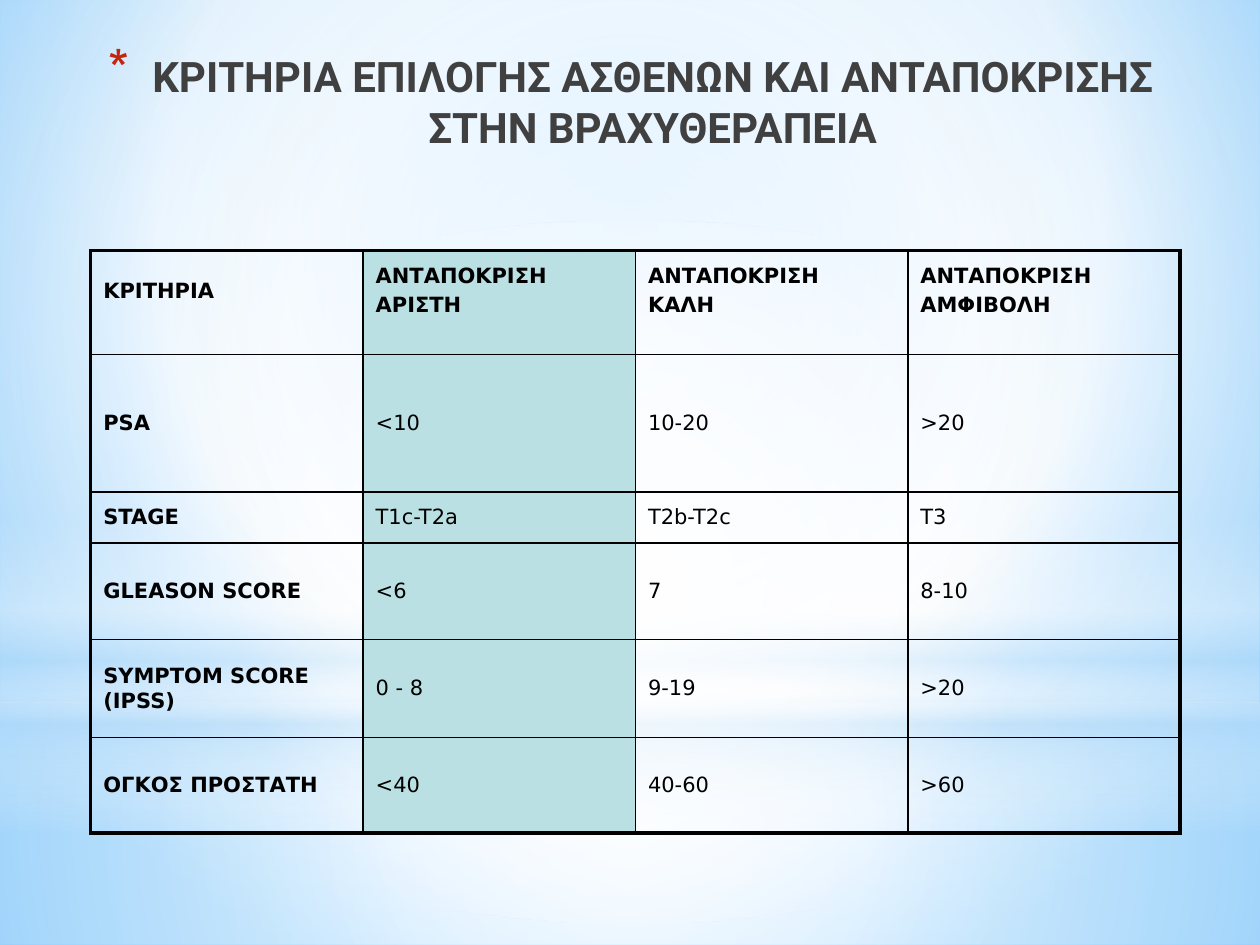
from dataclasses import dataclass

from lxml.etree import SubElement
from pptx import Presentation
from pptx.dml.color import RGBColor as Rgb
from pptx.enum.shapes import MSO_SHAPE as Shape
from pptx.enum.text import MSO_ANCHOR as Anchor, MSO_AUTO_SIZE as AutoSize, PP_ALIGN as Align
from pptx.oxml import parse_xml
from pptx.oxml.ns import nsdecls, qn
from pptx.util import Cm, Pt


@dataclass(frozen=True)
class Theme:
    title_font: str = "Roboto"
    body_font: str = "DejaVu Sans"
    title_size: float = 24
    body_size: float = 12
    title_color: str = "404040"
    body_color: str = "000000"
    bullet_color: str = "C3260C"
    highlight: str = "BBE0E3"
    white: str = "FFFFFF"
    haze: str = "B4DCFA"
    sky_inner: str = "9ED5FF"
    sky_outer: str = "5BB9FF"
    outer_border: float = 2.25
    inner_border: float = 1


class SlideBuilder:
    def __init__(self, presentation, theme):
        self.theme = theme
        self.slide = presentation.slides.add_slide(presentation.slide_layouts[5])

    def gradient(self, fill, element, stops, focus=None):
        """Stops are (position, colour, opacity); focus is left, top, right, bottom in %."""
        fill.gradient()
        gradient = element.find(".//" + qn("a:gradFill"))
        gradient.clear()
        stop_list = SubElement(gradient, qn("a:gsLst"))
        for position, color, opacity in stops:
            stop = SubElement(stop_list, qn("a:gs"), pos=str(position * 1000))
            rgb = SubElement(stop, qn("a:srgbClr"), val=color)
            if opacity < 100:
                SubElement(rgb, qn("a:alpha"), val=str(opacity * 1000))
        if focus:
            circle = SubElement(gradient, qn("a:path"))
            circle.set("path", "circle")
            sides = {side: str(value * 1000) for side, value in zip("ltrb", focus)}
            SubElement(circle, qn("a:fillToRect"), **sides)
        else:
            SubElement(gradient, qn("a:lin"), ang="5400000", scaled="0")

    def background(self, stops, focus):
        self.gradient(self.slide.background.fill, self.slide.element, stops, focus)

    def glow(self, kind, top, height, stops, focus=None):
        shape = self.slide.shapes.add_shape(kind, Cm(0), Cm(top), Cm(25.4), Cm(height))
        shape.shadow.inherit = False
        shape.line.fill.background()
        self.gradient(shape.fill, shape.element, stops, focus)

    def add_run(self, paragraph, text, font, size, color, bold):
        run = paragraph.add_run()
        run.text = text
        run.font.name = font
        run.font.size = Pt(size)
        run.font.bold = bold
        run.font.color.rgb = Rgb.from_string(color)

    def title(self, text, left, top, width, height):
        theme = self.theme
        title = self.slide.shapes.title
        title.left, title.top, title.width, title.height = map(Cm, (left, top, width, height))
        self.slide.shapes.element.append(title.element)  # in front of the glows
        frame = title.text_frame
        frame.word_wrap = True
        frame.auto_size = AutoSize.NONE
        frame.vertical_anchor = Anchor.TOP
        paragraph = frame.paragraphs[0]
        paragraph.alignment = Align.CENTER
        self.add_run(paragraph, text, theme.title_font, theme.title_size, theme.title_color, True)
        # Hanging asterisk bullet
        properties = paragraph._p.get_or_add_pPr()
        properties.set("marL", str(Cm(0.89)))
        properties.set("indent", str(Cm(-0.89)))
        bullet_color = SubElement(properties, qn("a:buClr"))
        SubElement(bullet_color, qn("a:srgbClr"), val=theme.bullet_color)
        SubElement(properties, qn("a:buSzPct"), val="128000")
        SubElement(properties, qn("a:buChar"), char="*")

    def cell(self, cell, text, bold, highlighted, outer_sides):
        theme = self.theme
        cell.vertical_anchor = Anchor.MIDDLE
        if highlighted:
            cell.fill.solid()
            cell.fill.fore_color.rgb = Rgb.from_string(theme.highlight)
        else:
            cell.fill.background()
        frame = cell.text_frame
        for index, line in enumerate(text.split("\n")):
            paragraph = frame.add_paragraph() if index else frame.paragraphs[0]
            paragraph.space_before = Pt(theme.body_size * 0.2)
            self.add_run(paragraph, line, theme.body_font, theme.body_size, theme.body_color, bold)
        # Borders precede the fill in the cell properties
        properties = cell._tc.get_or_add_tcPr()
        for index, side in enumerate("LRTB"):
            width = theme.outer_border if side in outer_sides else theme.inner_border
            properties.insert(index, parse_xml(
                f'<a:ln{side} {nsdecls("a")} w="{Pt(width)}"><a:solidFill>'
                f'<a:srgbClr val="{theme.body_color}"/></a:solidFill></a:ln{side}>'))

    def table(self, rows, row_heights, column_width, left, top, highlighted_column):
        row_count, column_count = len(rows), len(rows[0])
        table = self.slide.shapes.add_table(
            row_count, column_count, Cm(left), Cm(top),
            Cm(column_width * column_count), Cm(sum(row_heights))).table
        table.first_row = table.horz_banding = False
        for column in table.columns:
            column.width = Cm(column_width)
        for r, (texts, height) in enumerate(zip(rows, row_heights)):
            table.rows[r].height = Cm(height)
            for c, text in enumerate(texts):
                edges = {"L": c == 0, "R": c == column_count - 1,
                         "T": r == 0, "B": r == row_count - 1}
                outer_sides = [side for side, outer in edges.items() if outer]
                cell = table.cell(r, c)
                self.cell(cell, text, r == 0 or c == 0, c == highlighted_column, outer_sides)
                if r == 0:
                    cell.margin_bottom = Cm(0.6)  # headings sit above the middle


def main():
    presentation = Presentation()
    presentation.slide_width, presentation.slide_height = Cm(25.4), Cm(19.05)
    theme = Theme()
    builder = SlideBuilder(presentation, theme)
    white, haze = theme.white, theme.haze
    center = (50, 50, 50, 50)

    # Sky backdrop and soft glows
    builder.background([(0, theme.sky_inner, 100), (60, white, 100),
                        (100, theme.sky_outer, 100)], (20, 10, 20, 60))
    builder.glow(Shape.RECTANGLE, 14.17, 4.88,
                 [(0, white, 91), (37, white, 76), (100, haze, 79)], center)
    builder.glow(Shape.RECTANGLE, 0, 14.17,
                 [(0, white, 89), (48, white, 62), (100, haze, 79)], center)
    builder.glow(Shape.RECTANGLE, 10.46, 6.35,
                 [(0, white, 0), (29, white, 30), (45, haze, 40),
                  (55, white, 26), (65, haze, 60), (100, white, 0)])
    builder.glow(Shape.OVAL, 4.45, 14.17, [(0, white, 100), (56, white, 0)], center)

    # Title
    builder.title("ΚΡΙΤΗΡΙΑ ΕΠΙΛΟΓΗΣ ΑΣΘΕΝΩΝ ΚΑΙ ΑΝΤΑΠΟΚΡΙΣΗΣ ΣΤΗΝ ΒΡΑΧΥΘΕΡΑΠΕΙΑ",
                  1.6, 0.9, 22.23, 2.8)

    # Criteria table
    rows = [
        ("ΚΡΙΤΗΡΙΑ", "ΑΝΤΑΠΟΚΡΙΣΗ\nΑΡΙΣΤΗ", "ΑΝΤΑΠΟΚΡΙΣΗ\nΚΑΛΗ", "ΑΝΤΑΠΟΚΡΙΣΗ\nΑΜΦΙΒΟΛΗ"),
        ("PSA", "<10", "10-20", ">20"),
        ("STAGE", "T1c-T2a", "T2b-T2c", "T3"),
        ("GLEASON SCORE", "<6", "7", "8-10"),
        ("SYMPTOM SCORE (ΙPSS)", "0 - 8", "9-19", ">20"),
        ("ΟΓΚΟΣ ΠΡΟΣΤΑΤΗ", "<40", "40-60", ">60"),
    ]
    builder.table(rows, [2.1, 2.77, 1.03, 1.94, 1.98, 1.92], 5.49, 1.83, 5.05,
                  highlighted_column=1)

    presentation.save("out.pptx")


if __name__ == "__main__":
    main()
